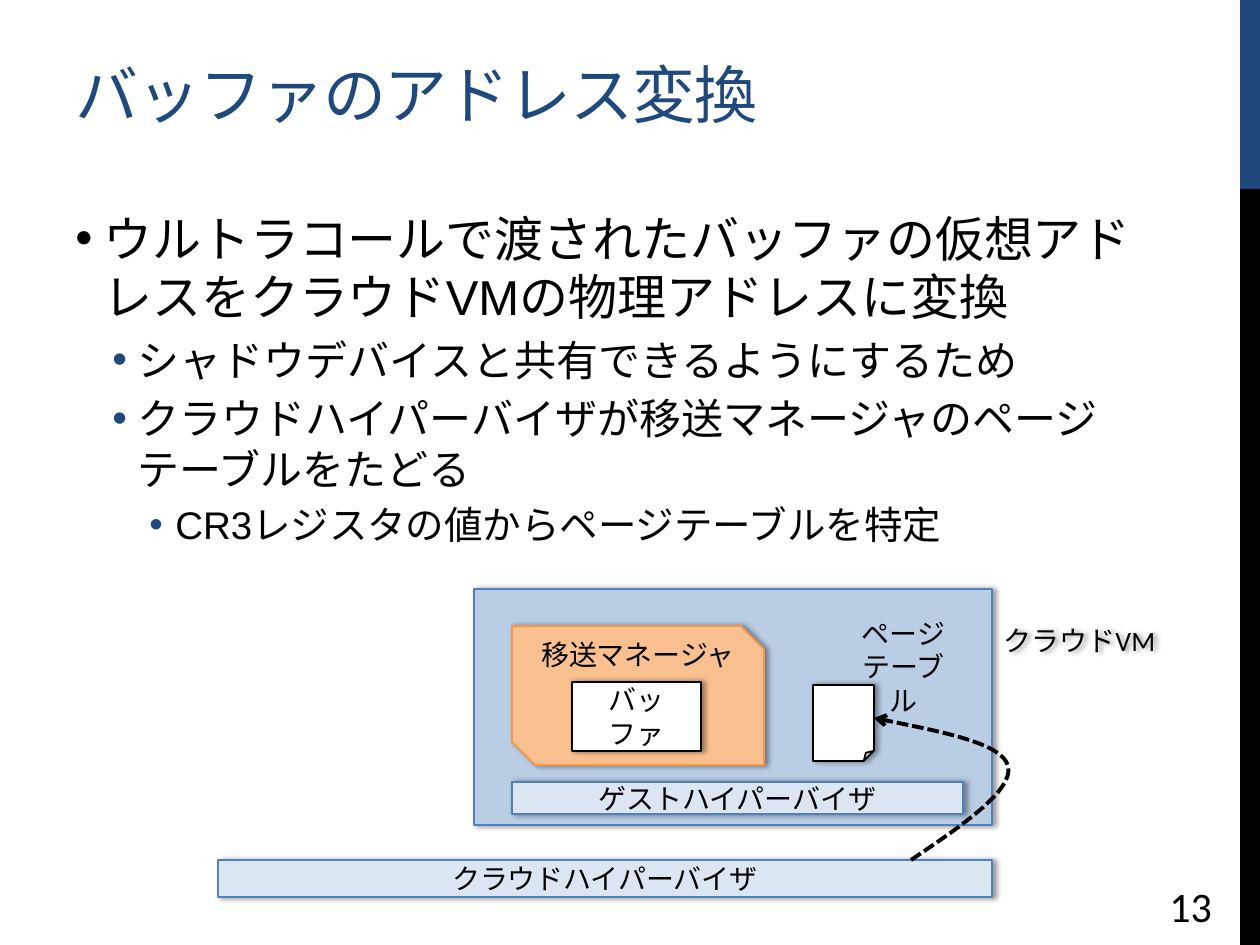
from dataclasses import dataclass

from lxml.etree import SubElement
from pptx import Presentation
from pptx.dml.color import RGBColor
from pptx.enum.dml import MSO_LINE
from pptx.enum.shapes import MSO_SHAPE as Preset
from pptx.enum.text import MSO_ANCHOR as Anchor, PP_ALIGN as Align
from pptx.oxml.ns import qn
from pptx.util import Pt

PX = 914400 / 126
COLORS = {
    "navy": "1F497D", "black": "000000", "white": "FFFFFF", "blue": "4F81BD",
    "pale": "DCE6F2", "sky": "B9CDE5", "peach": "FAC090", "orange": "F79646",
}


@dataclass
class Box:
    x: int
    y: int
    w: int
    h: int
    fill: str
    line: str = ""
    text: str = ""
    preset: Preset = Preset.RECTANGLE
    anchor: Anchor = Anchor.MIDDLE
    inset_top: int = 6


@dataclass
class Label:
    x: int
    y: int
    w: int
    h: int
    lines: tuple[str, ...]
    size: int = 16
    font: str = "Calibri"
    color: str = "black"
    align: Align = Align.CENTER
    anchor: Anchor = Anchor.MIDDLE
    wrap: bool = True
    spacing: int = 0
    shadow: bool = False


@dataclass
class Bullet:
    level: int
    text: str


@dataclass
class Level:
    size: int
    margin: int
    hang: int
    color: str


LEVELS = [Level(28, 28, 28, "black"), Level(24, 62, 25, "navy"), Level(22, 100, 26, "navy")]
BULLETS = [
    Bullet(0, "ウルトラコールで渡されたバッファの仮想アドレスをクラウドVMの物理アドレスに変換"),
    Bullet(1, "シャドウデバイスと共有できるようにするため"),
    Bullet(1, "クラウドハイパーバイザが移送マネージャのページテーブルをたどる"),
    Bullet(2, "CR3レジスタの値からページテーブルを特定"),
]
SIDE_BARS = [Box(1240, 0, 20, 189, "navy"), Box(1240, 189, 20, 756, "black")]
DIAGRAM = [
    Box(218, 860, 774, 37, "pale", "blue", "クラウドハイパーバイザ"),
    Box(474, 589, 518, 236, "sky", "blue"),
    Box(512, 626, 252, 139, "peach", "orange", "移送マネージャ",
        Preset.SNIP_2_DIAG_RECTANGLE, Anchor.TOP, 0),
    Box(512, 782, 451, 32, "pale", "blue", "ゲストハイパーバイザ"),
    Box(813, 685, 61, 76, "white", "black", preset=Preset.FOLDED_CORNER),
    Box(572, 682, 129, 69, "white", "black", "バッファ"),
]
LABELS = [
    Label(63, 21, 1119, 144, ("バッファのアドレス変換",), 36, "Arial", "navy",
          Align.LEFT, spacing=-60),
    Label(1157, 879, 168, 54, ("13",), 24, align=Align.LEFT),
    Label(977, 626, 205, 29, ("クラウドVM",), wrap=False, shadow=True),
    Label(838, 610, 131, 81, ("ページ", "テーブル"), anchor=Anchor.TOP),
]
ARROW_START = (911, 860)
ARROW_CURVES = [
    ((963, 825), (1014, 790), (1008, 766)),
    ((1002, 742), (937, 731), (874, 718)),
]


def px(n: float) -> int:
    return round(n * PX)


def rgb(name: str) -> RGBColor:
    return RGBColor.from_string(COLORS[name])


def add_run(p, text: str, size: int, font: str, color: str = "black"):
    r = p.add_run()
    r.text = text
    r.font.size = Pt(size)
    r.font.name = font
    r.font.color.rgb = rgb(color)
    return r


def add_shadow(sp) -> None:
    sp.shadow.inherit = False
    effects = sp._element.spPr.find(qn("a:effectLst"))
    outer = SubElement(effects, qn("a:outerShdw"), blurRad=str(Pt(3.1)),
                       dist=str(Pt(1.8)), dir="0", rotWithShape="0")
    color = SubElement(outer, qn("a:srgbClr"), val=COLORS["black"])
    SubElement(color, qn("a:alpha"), val="40000")


def add_box(s, box: Box) -> None:
    sp = s.shapes.add_shape(box.preset, px(box.x), px(box.y), px(box.w), px(box.h))
    sp.shadow.inherit = False
    sp.fill.solid()
    sp.fill.fore_color.rgb = rgb(box.fill)
    if box.line:
        sp.line.color.rgb = rgb(box.line)
        sp.line.width = Pt(1)
        add_shadow(sp)
    else:
        sp.line.fill.background()
    if box.text:
        tf = sp.text_frame
        tf.word_wrap = True
        tf.vertical_anchor = box.anchor
        tf.margin_top = px(box.inset_top)
        p = tf.paragraphs[0]
        p.alignment = Align.CENTER
        add_run(p, box.text, 16, "Calibri")


def add_label(s, label: Label) -> None:
    sp = s.shapes.add_textbox(px(label.x), px(label.y), px(label.w), px(label.h))
    tf = sp.text_frame
    tf.word_wrap = label.wrap
    tf.vertical_anchor = label.anchor
    for i, line in enumerate(label.lines):
        p = tf.add_paragraph() if i else tf.paragraphs[0]
        p.alignment = label.align
        r = add_run(p, line, label.size, label.font, label.color)
        if label.spacing:
            r.font._element.set("spc", str(label.spacing))
    if label.shadow:
        add_shadow(sp)


def add_bullets(s, bullets: list[Bullet]) -> None:
    tf = s.shapes.add_textbox(px(63), px(202), px(1119), px(643)).text_frame
    tf.word_wrap = True
    for i, bullet in enumerate(bullets):
        level = LEVELS[bullet.level]
        p = tf.add_paragraph() if i else tf.paragraphs[0]
        p.level = bullet.level
        p.space_before = Pt(level.size * 0.2)
        pPr = p._p.get_or_add_pPr()
        pPr.set("marL", str(px(level.margin)))
        pPr.set("indent", str(-px(level.hang)))
        color = SubElement(pPr, qn("a:buClr"))
        SubElement(color, qn("a:srgbClr"), val=COLORS[level.color])
        SubElement(pPr, qn("a:buFont"), typeface="Arial")
        SubElement(pPr, qn("a:buChar"), char="•")
        add_run(p, bullet.text, level.size, "Arial")


def bezier(a, b, c, d, steps: int = 16) -> list[tuple[float, float]]:
    """Points along a cubic curve, without its start."""
    ts = [i / steps for i in range(1, steps + 1)]
    return [tuple((1 - t) ** 3 * k + 3 * (1 - t) ** 2 * t * m + 3 * (1 - t) * t * t * n + t ** 3 * o
                  for k, m, n, o in zip(a, b, c, d)) for t in ts]


def add_curved_arrow(s) -> None:
    points, start = [], ARROW_START
    for curve in ARROW_CURVES:
        points += bezier(start, *curve)
        start = curve[-1]
    builder = s.shapes.build_freeform(px(ARROW_START[0]), px(ARROW_START[1]), 1.0)
    builder.add_line_segments([(px(x), px(y)) for x, y in points], close=False)
    sp = builder.convert_to_shape()
    sp.shadow.inherit = False
    sp.fill.background()
    sp.line.color.rgb = rgb("black")
    sp.line.width = Pt(2.25)
    sp.line.dash_style = MSO_LINE.SQUARE_DOT
    SubElement(sp.line._get_or_add_ln(), qn("a:tailEnd"), type="arrow")


def main() -> None:
    prs = Presentation()
    prs.slide_width, prs.slide_height = px(1260), px(945)
    s = prs.slides.add_slide(prs.slide_layouts[6])
    for box in SIDE_BARS + DIAGRAM:
        add_box(s, box)
    add_bullets(s, BULLETS)
    for label in LABELS:
        add_label(s, label)
    add_curved_arrow(s)
    prs.save("out.pptx")


if __name__ == "__main__":
    main()
